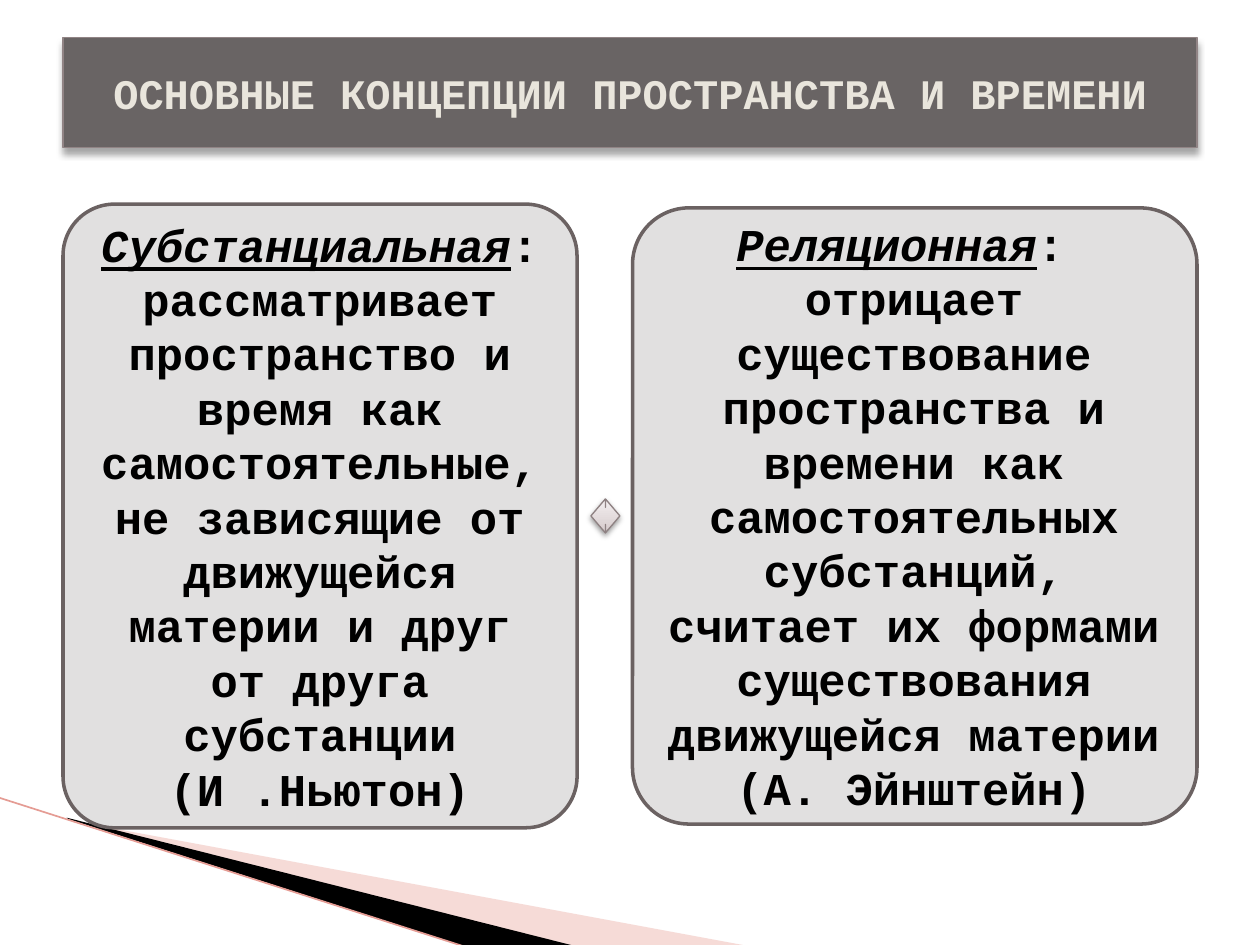
from lxml import etree
from pptx import Presentation
from pptx.dml.color import RGBColor
from pptx.enum.shapes import MSO_CONNECTOR, MSO_SHAPE
from pptx.enum.text import MSO_ANCHOR, PP_ALIGN
from pptx.oxml.ns import qn
from pptx.util import Inches, Pt

RECT, ROUNDED = MSO_SHAPE.RECTANGLE, MSO_SHAPE.ROUNDED_RECTANGLE
ARROW = MSO_SHAPE.LEFT_RIGHT_ARROW
STRAIGHT = MSO_CONNECTOR.STRAIGHT
MIDDLE, CENTER = MSO_ANCHOR.MIDDLE, PP_ALIGN.CENTER

FONT = "Courier New"
COLORS = {
    "pink": "E9A59D", "black": "000000", "edge": "E59C94",
    "card": "E1E0E0", "card_line": "6B6262",
    "arrow_dark": "D5CACB", "arrow_light": "F4F0F1", "arrow_line": "8E8182",
    "title": "696464", "title_line": "918485", "title_text": "E9E5DC",
}

TITLE = "ОСНОВНЫЕ КОНЦЕПЦИИ ПРОСТРАНСТВА И ВРЕМЕНИ"
# card box, text box, paragraphs of (text, is_term) runs
CONCEPTS = [
    ((0.5, 1.62, 4.08, 4.95), (0.62, 1.74, 3.84, 4.71), [
        [("Субстанциальная", True),
         (": рассматривает пространство и время как самостоятельные, "
          "не зависящие от движущейся материи и друг от друга субстанции", False)],
        [("(И .Ньютон)", False)],
    ]),
    ((5.02, 1.65, 4.48, 4.89), (5.15, 1.78, 4.21, 4.62), [
        [("Реляционная", True), (": ", False)],
        [("отрицает существование пространства и времени как самостоятельных "
          "субстанций, считает их формами существования движущейся материи", False)],
        [("(А. Эйнштейн)", False)],
    ]),
]
# points, colour, opacity in percent
WEDGES = [
    ([(0.55, 6.51), (5.95, 7.51), (4.56, 7.51), (0.55, 6.5)], "pink", 40),
    ([(0.53, 6.49), (4.57, 7.51), (3.72, 7.52), (0.54, 6.5)], "black", 100),
]


def rgb(name):
    return RGBColor.from_string(COLORS[name])


def add_alpha(color_el, percent):
    etree.SubElement(color_el, qn("a:alpha")).set("val", str(percent * 1000))


def add_shadow(sp, opacity, blur, dist):
    effects = sp._element.spPr.find(qn("a:effectLst"))
    shadow = etree.SubElement(effects, qn("a:outerShdw"), blurRad=str(Pt(blur)),
                              dist=str(Pt(dist)), dir="5400000", rotWithShape="0")
    color = etree.SubElement(shadow, qn("a:srgbClr"), val=COLORS["black"])
    add_alpha(color, opacity)


def add_box(slide, kind, box, line, width, fill=None):
    sp = slide.shapes.add_shape(kind, *map(Inches, box))
    sp.shadow.inherit = False
    if fill:
        sp.fill.solid()
        sp.fill.fore_color.rgb = rgb(fill)
    sp.line.color.rgb = rgb(line)
    sp.line.width = Pt(width)
    return sp


def write(sp, paragraphs, size, color="black", inset=0.1, spacing=None):
    tf = sp.text_frame
    tf.word_wrap = True
    tf.vertical_anchor = MIDDLE
    tf.margin_left = tf.margin_right = Inches(inset)
    tf.margin_top = tf.margin_bottom = 0
    for i, runs in enumerate(paragraphs):
        p = tf.add_paragraph() if i else tf.paragraphs[0]
        p.alignment = CENTER
        if spacing:
            p.line_spacing = Pt(spacing)
        for text, is_term in runs:
            r = p.add_run()
            r.text = text
            r.font.name, r.font.size, r.font.bold = FONT, Pt(size), True
            r.font.italic = r.font.underline = is_term
            r.font.color.rgb = rgb(color)


def add_wedge(slide, points, color, opacity):
    start, *rest = [(Inches(x), Inches(y)) for x, y in points]
    builder = slide.shapes.build_freeform(*start)
    builder.add_line_segments(rest)
    sp = builder.convert_to_shape()
    sp.shadow.inherit = False
    sp.fill.solid()
    sp.fill.fore_color.rgb = rgb(color)
    sp.line.fill.background()
    if opacity < 100:
        add_alpha(sp._element.spPr.find(qn("a:solidFill"))[0], opacity)


def main():
    prs = Presentation()
    prs.slide_width, prs.slide_height = Inches(10), Inches(7.5)
    slide = prs.slides.add_slide(prs.slide_layouts[6])

    for wedge in WEDGES:
        add_wedge(slide, *wedge)
    edge = slide.shapes.add_connector(
        STRAIGHT, *map(Inches, (-0.01, 6.33, 3.71, 7.52)))
    edge.line.color.rgb = rgb("edge")
    edge.line.width = Pt(0.95)
    etree.SubElement(edge._element.spPr, qn("a:effectLst"))

    for card_box, text_box, paragraphs in CONCEPTS:
        card = add_box(slide, ROUNDED, card_box, "card_line", 2, "card")
        card.adjustments[0] = 0.1
        label = slide.shapes.add_textbox(*map(Inches, text_box))
        write(label, paragraphs, 26, inset=0.11, spacing=31.1)

    arrow = add_box(slide, ARROW, (4.69, 3.96, 0.23, 0.27), "arrow_line", 0.75)
    arrow.fill.gradient()
    arrow.fill.gradient_angle = 90
    for stop, color in zip(arrow.fill.gradient_stops, ("arrow_dark", "arrow_light")):
        stop.color.rgb = rgb(color)
    add_shadow(arrow, 38, 3.1, 1.6)

    title = add_box(slide, RECT, (0.5, 0.3, 9, 0.87), "title_line", 0.75, "title")
    add_shadow(title, 35, 4, 3)
    write(title, [[(TITLE, False)]], 24, "title_text")

    prs.save("out.pptx")


if __name__ == "__main__":
    main()
